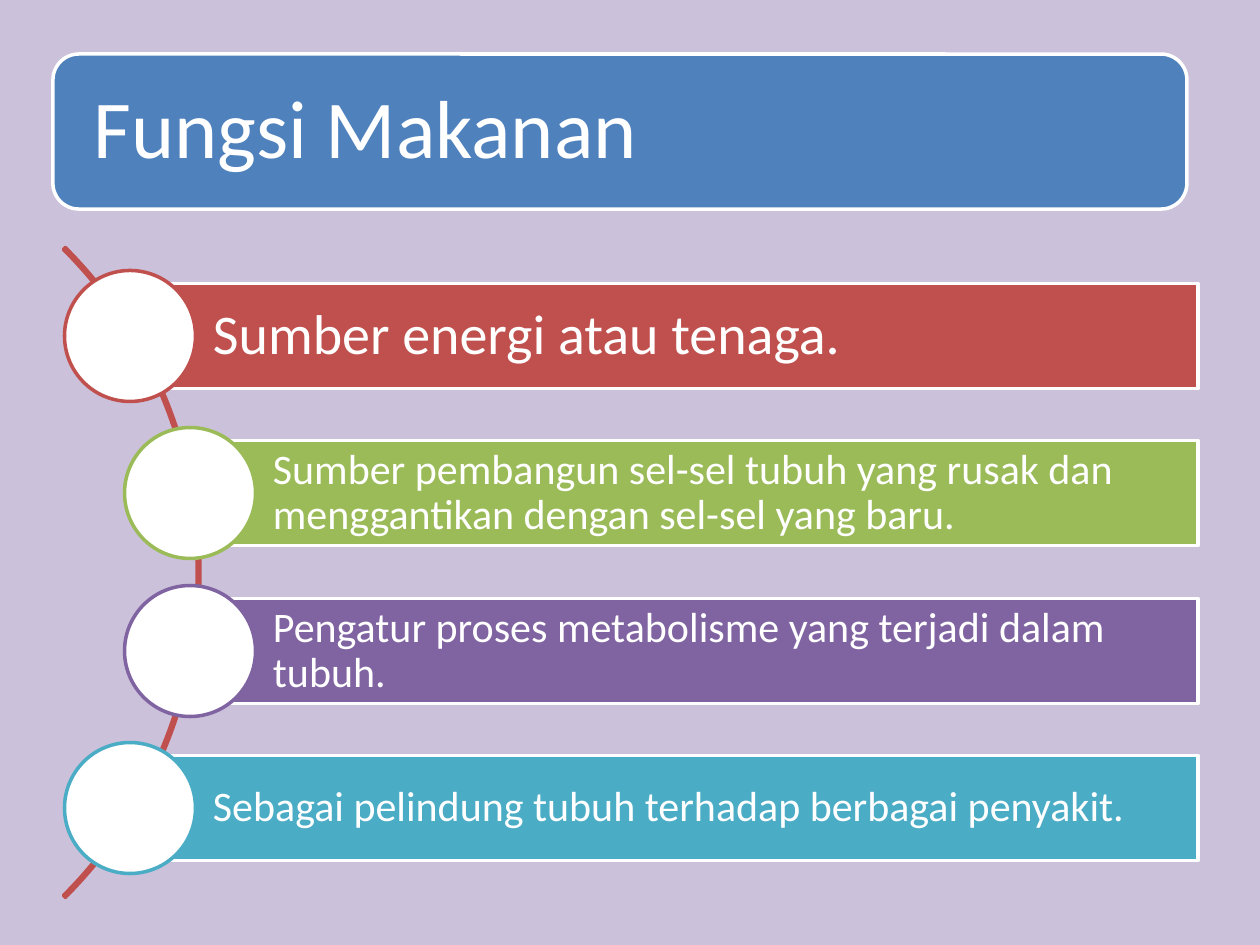
from dataclasses import dataclass

from pptx import Presentation
from pptx import util as u
from pptx.dml.color import RGBColor
from pptx.enum import shapes, text

EMU_PER_PX = 914400 / 126
COLORS = {
    "background": "CCC1DA",
    "white": "FFFFFF",
    "blue": "4F81BD",
    "red": "C0504D",
    "green": "9BBB59",
    "purple": "8064A2",
    "teal": "4BACC6",
}
FONT = "Calibri"
BAR_RIGHT, BAR_HEIGHT, CIRCLE_SIZE = 1198, 105, 131
FIRST_CENTER, LAST_CENTER = 336, 808


@dataclass
class Function:
    wording: str
    color: str
    left: int  # start of the bar and center of the circle
    size: int = 24
    inset: int = 9


FUNCTIONS = [
    Function("Sumber energi atau tenaga.", "red", 130, 32, 11),
    Function("Sumber pembangun sel-sel tubuh yang rusak dan "
             "menggantikan dengan sel-sel yang baru.", "green", 190),
    Function("Pengatur proses metabolisme yang terjadi dalam tubuh.", "purple", 190),
    Function("Sebagai pelindung tubuh terhadap berbagai penyakit.", "teal", 130),
]


def px(length: float) -> int:
    return round(length * EMU_PER_PX)


def rgb(name: str) -> RGBColor:
    return RGBColor.from_string(COLORS[name])


def add_shape(slide, kind, left: float, top: float, width: int, height: int,
              fill: str | None, line: str):
    shape = slide.shapes.add_shape(kind, px(left), px(top), px(width), px(height))
    shape.shadow.inherit = False
    if fill is None:
        shape.fill.background()
    else:
        shape.fill.solid()
        shape.fill.fore_color.rgb = rgb(fill)
    shape.line.color.rgb = rgb(line)
    shape.line.width = u.Pt(2)
    return shape


def write(shape, wording: str, size: int, left_inset: int, inset: int) -> None:
    frame = shape.text_frame
    frame.word_wrap = True
    frame.vertical_anchor = text.MSO_ANCHOR.MIDDLE
    frame.margin_left = px(left_inset)
    frame.margin_top = frame.margin_right = frame.margin_bottom = px(inset)
    paragraph = frame.paragraphs[0]
    paragraph.text = wording
    paragraph.alignment = text.PP_ALIGN.LEFT
    paragraph.line_spacing = 0.9
    paragraph.font.name = FONT
    paragraph.font.size = u.Pt(size)
    paragraph.font.color.rgb = rgb("white")


def add_function(slide, function: Function, center: int) -> None:
    bar = add_shape(slide, shapes.MSO_SHAPE.RECTANGLE, function.left,
                    center - BAR_HEIGHT / 2, BAR_RIGHT - function.left, BAR_HEIGHT,
                    function.color, "white")
    write(bar, function.wording, function.size, 83, function.inset)
    add_shape(slide, shapes.MSO_SHAPE.OVAL, function.left - CIRCLE_SIZE / 2,
              center - CIRCLE_SIZE / 2, CIRCLE_SIZE, CIRCLE_SIZE,
              "white", function.color)


def main() -> None:
    presentation = Presentation()
    presentation.slide_width, presentation.slide_height = px(1260), px(945)
    slide = presentation.slides.add_slide(presentation.slide_layouts[6])
    slide.background.fill.solid()
    slide.background.fill.fore_color.rgb = rgb("background")

    # Title
    title = add_shape(slide, shapes.MSO_SHAPE.ROUNDED_RECTANGLE, 53, 54, 1134, 155,
                      "blue", "white")
    write(title, "Fungsi Makanan", 47, 33, 33)

    # Arc behind the list, from 315 to 45 degrees
    arc = add_shape(slide, shapes.MSO_SHAPE.BLOCK_ARC, -719, 113, 919, 919, None, "red")
    for index, value in enumerate((189, 27, 0.003)):
        arc.adjustments[index] = value

    # Evenly spaced functions
    step = (LAST_CENTER - FIRST_CENTER) / (len(FUNCTIONS) - 1)
    for index, function in enumerate(FUNCTIONS):
        add_function(slide, function, round(FIRST_CENTER + index * step))

    presentation.save("out.pptx")


if __name__ == "__main__":
    main()
